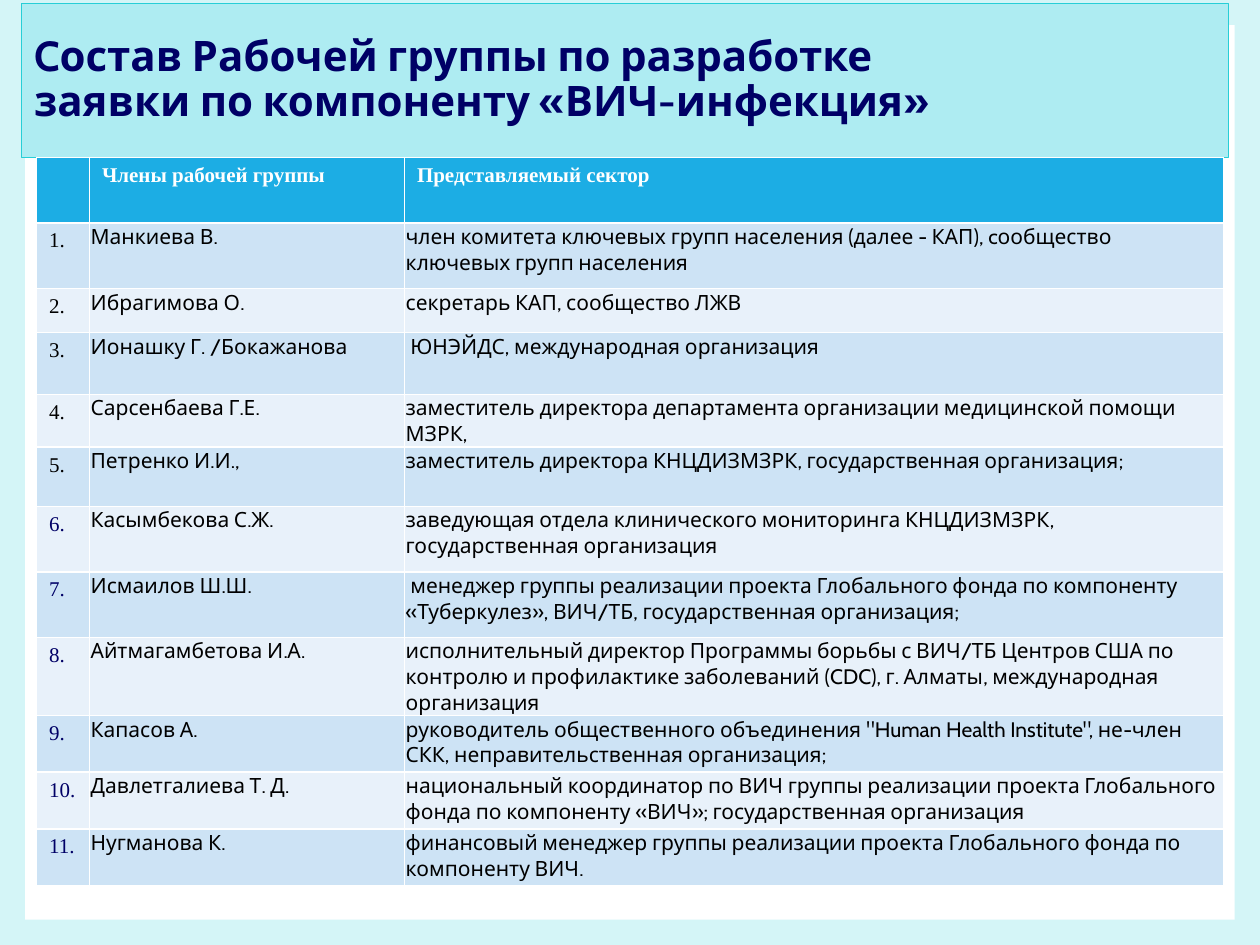
from pptx import Presentation
from pptx.dml.color import RGBColor
from pptx.enum.shapes import MSO_SHAPE
from pptx.enum.text import MSO_ANCHOR, MSO_AUTO_SIZE, PP_ALIGN
from pptx.util import Inches, Pt

COLORS = {
    "background": "D4F5F7",
    "white": "FFFFFF",
    "title_fill": "AEECF2",
    "title_line": "27CED7",
    "navy": "000066",
    "black": "000000",
    "header": "1CADE4",
    "odd_row": "CDE3F5",
    "even_row": "E8F1FA",
}
BODY_FONT = "Cabin"
NUMBER_FONT = "Times New Roman"

HEADINGS = ("", "Члены рабочей группы", "Представляемый сектор")
MEMBERS = [
    ("Манкиева В.", "член комитета ключевых групп населения (далее - КАП), "
     "cообщество ключевых групп населения"),
    ("Ибрагимова О.", "секретарь КАП, сообщество ЛЖВ"),
    ("Ионашку Г. /Бокажанова", " ЮНЭЙДС, международная организация"),
    ("Сарсенбаева Г.Е.", "заместитель директора департамента организации "
     "медицинской помощи МЗРК,"),
    ("Петренко И.И.,", "заместитель директора КНЦДИЗМЗРК, "
     "государственная организация;"),
    ("Касымбекова С.Ж.", "заведующая отдела клинического мониторинга "
     "КНЦДИЗМЗРК, государственная организация"),
    ("Исмаилов Ш.Ш.", " менеджер группы реализации проекта Глобального фонда "
     "по компоненту «Туберкулез», ВИЧ/ТБ, государственная организация;"),
    ("Айтмагамбетова И.А.", "исполнительный директор Программы борьбы с ВИЧ/ТБ "
     "Центров США по контролю и профилактике заболеваний (CDC), г. Алматы, "
     "международная организация"),
    ("Капасов А.", "руководитель общественного объединения "
     "\"Human Health Institute\", не-член СКК, неправительственная организация;"),
    ("Давлетгалиева Т. Д.", "национальный координатор по ВИЧ группы реализации "
     "проекта Глобального фонда по компоненту «ВИЧ»; государственная организация"),
    ("Нугманова К.", "финансовый менеджер группы реализации проекта "
     "Глобального фонда по компоненту ВИЧ."),
]
COLUMN_WIDTHS = (0.42, 2.5, 6.5)
ROW_HEIGHTS = (0.52, 0.52, 0.35, 0.49, 0.42, 0.47, 0.52, 0.52, 0.62, 0.45, 0.45, 0.45)
FIRST_NAVY_NUMBER = 6


def rgb(name):
    return RGBColor.from_string(COLORS[name])


def style_font(font, face, size, color, bold):
    font.name = face
    font.size = Pt(size)
    font.color.rgb = rgb(color)
    font.bold = bold


prs = Presentation()
prs.slide_width = Inches(10)
prs.slide_height = Inches(7.5)
slide = prs.slides.add_slide(prs.slide_layouts[5])
slide.background.fill.solid()
slide.background.fill.fore_color.rgb = rgb("background")

# Title band
title = slide.shapes.title
title.left, title.top = Inches(0.17), Inches(0.03)
title.width, title.height = Inches(9.58), Inches(1.22)
title.fill.solid()
title.fill.fore_color.rgb = rgb("title_fill")
title.line.color.rgb = rgb("title_line")
title.line.width = Pt(0.79)
title_frame = title.text_frame
title_frame.text = "Cостав Рабочей группы по разработке \vзаявки по компоненту «ВИЧ-инфекция»"
title_frame.word_wrap = True
title_frame.auto_size = MSO_AUTO_SIZE.NONE
title_frame.vertical_anchor = MSO_ANCHOR.MIDDLE
heading = title_frame.paragraphs[0]
heading.alignment = PP_ALIGN.LEFT
heading.line_spacing = 0.9
style_font(heading.font, BODY_FONT, 24, "navy", True)

# White panel behind the title
panel = slide.shapes.add_shape(
    MSO_SHAPE.RECTANGLE, Inches(0.2), Inches(0.2), Inches(9.6), Inches(7.1))
panel.shadow.inherit = False
panel.fill.solid()
panel.fill.fore_color.rgb = rgb("white")
panel.line.fill.background()
title.element.addprevious(panel.element)

# Members table
rows = [HEADINGS] + [(f"{number}.", *member) for number, member in enumerate(MEMBERS, 1)]
members_table = slide.shapes.add_table(
    len(rows), len(HEADINGS), Inches(0.29), Inches(1.25),
    Inches(sum(COLUMN_WIDTHS)), Inches(sum(ROW_HEIGHTS))).table
for column, width in zip(members_table.columns, COLUMN_WIDTHS):
    column.width = Inches(width)

for r, (texts, height) in enumerate(zip(rows, ROW_HEIGHTS)):
    members_table.rows[r].height = Inches(height)
    row_fill = "header" if r == 0 else "odd_row" if r % 2 else "even_row"
    for c, text in enumerate(texts):
        cell = members_table.cell(r, c)
        cell.fill.solid()
        cell.fill.fore_color.rgb = rgb(row_fill)
        cell.text = text
        face, color = NUMBER_FONT, "black"
        if r == 0:
            color = "white"
        elif c == 0:
            color = "navy" if r >= FIRST_NAVY_NUMBER else "black"
        else:
            face = BODY_FONT
            cell.margin_left = cell.margin_right = cell.margin_top = Inches(0.01)
            cell.margin_bottom = 0
        style_font(cell.text_frame.paragraphs[0].font, face, 12, color, r == 0)

prs.save("out.pptx")
